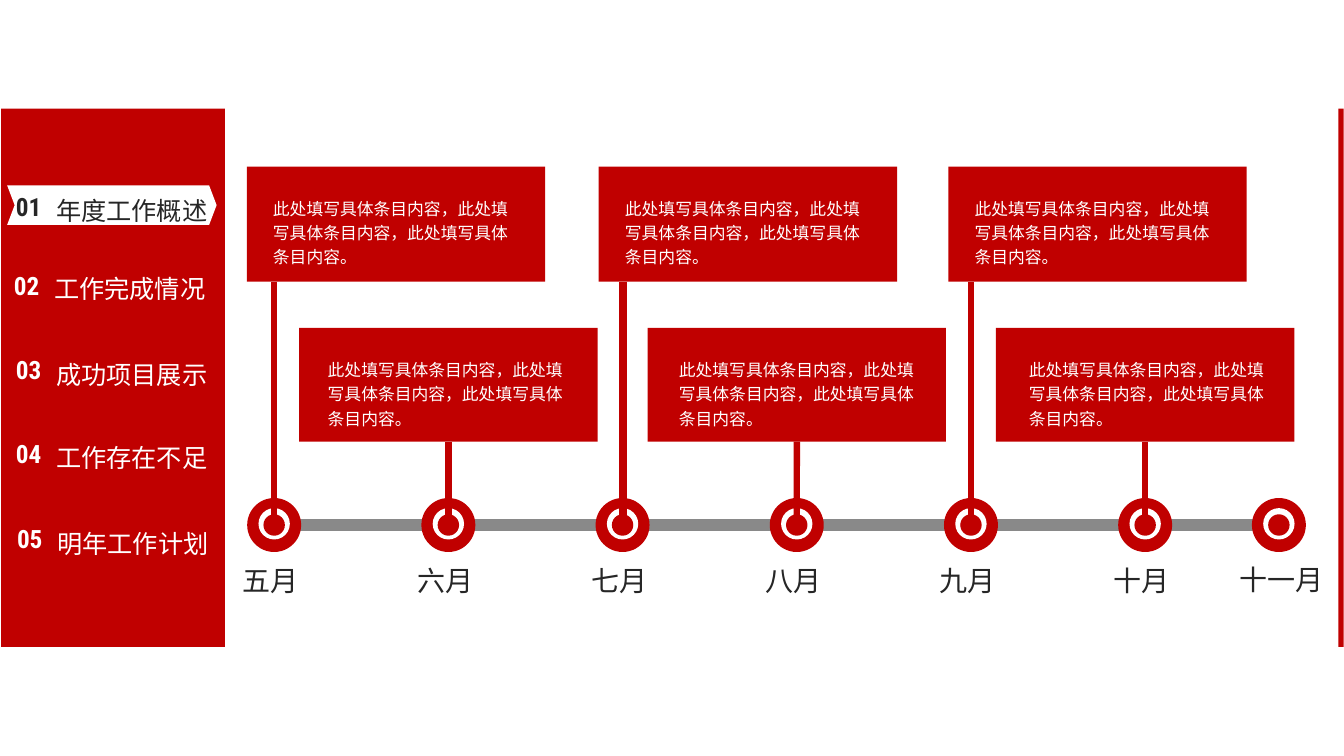
from dataclasses import dataclass

import lxml.etree
import pptx
import pptx.dml.color
import pptx.enum.shapes
import pptx.enum.text
import pptx.oxml.ns
import pptx.presentation
import pptx.shapes.autoshape
import pptx.slide
import pptx.text.text
import pptx.util

Cm = pptx.util.Cm
Kind = pptx.enum.shapes.MSO_SHAPE
Align = pptx.enum.text.PP_ALIGN

RED = pptx.dml.color.RGBColor(0xC0, 0x00, 0x00)
WHITE = pptx.dml.color.RGBColor(0xFF, 0xFF, 0xFF)
DARK = pptx.dml.color.RGBColor(0x26, 0x26, 0x26)
GREY = pptx.dml.color.RGBColor(0x89, 0x89, 0x89)

FIRST, PITCH, LAST = 6.91, 4.39, 32.23
AXIS = 13.23
CARD_WIDTH = 7.52
TEXT_WIDTH = 6.07
NOTE = "此处填写具体条目内容，此处填写具体条目内容，此处填写具体条目内容。"


@dataclass
class Topic:
    label: str
    left: float
    top: float
    label_top: float


@dataclass
class Month:
    name: str
    mid: float
    left: float
    top: float
    width: float


@dataclass
class Card:
    left: float
    top: float
    height: float
    inset: float
    stem: float
    weight: float = 4.6
    joined: bool = False


TOPICS = [
    Topic("年度工作概述", 0.15, 4.7, 4.42),
    Topic("工作完成情况", 0.1, 6.68, 6.38),
    Topic("成功项目展示", 0.15, 8.81, 8.56),
    Topic("工作存在不足", 0.15, 10.92, 10.64),
    Topic("明年工作计划", 0.18, 13.06, 12.8),
]

MIDS = [FIRST + PITCH * i for i in range(6)]
MONTHS = [
    Month(name, mid, mid - 1.04, 14.07, 1.93)
    for name, mid in zip(["五月", "六月", "七月", "八月", "九月", "十月"], MIDS)
] + [Month("十一月", LAST, LAST - 1.24, 14.05, 2.64)]

CARDS = [
    Card(6.22, 4.2, 2.9, 0.66, MIDS[0]),
    Card(15.09, 4.2, 2.9, 0.66, MIDS[2], weight=5.8),
    Card(23.9, 4.2, 2.9, 0.66, MIDS[4]),
] + [
    Card(mid - CARD_WIDTH / 2, 8.26, 2.87, inset, mid, joined=True)
    for mid, inset in zip(MIDS[1::2], [0.72, 0.79, 0.83])
]


def write(
    frame: pptx.text.text.TextFrame,
    text: str,
    *,
    size: float,
    font: str,
    color: pptx.dml.color.RGBColor,
    bold: bool = False,
    align: Align = Align.LEFT,
    space: float = 1.0,
    wrap: bool = True,
) -> None:
    frame.word_wrap = wrap
    frame.vertical_anchor = pptx.enum.text.MSO_ANCHOR.TOP
    line = frame.paragraphs[0]
    line.alignment = align
    line.line_spacing = space
    run = line.add_run()
    run.text = text
    run.font.size = pptx.util.Pt(size)
    run.font.name = font
    run.font.bold = bold
    run.font.color.rgb = color


def draw(
    slide: pptx.slide.Slide,
    kind: Kind,
    left: float,
    top: float,
    width: float,
    height: float,
    color: pptx.dml.color.RGBColor,
) -> pptx.shapes.autoshape.Shape:
    shape = slide.shapes.add_shape(kind, Cm(left), Cm(top), Cm(width), Cm(height))
    shape.shadow.inherit = False
    shape.fill.solid()
    shape.fill.fore_color.rgb = color
    shape.line.fill.background()
    return shape


def add_box(
    slide: pptx.slide.Slide, left: float, top: float, width: float, height: float
) -> pptx.text.text.TextFrame:
    box = slide.shapes.add_textbox(Cm(left), Cm(top), Cm(width), Cm(height))
    return box.text_frame


def add_title(
    slide: pptx.slide.Slide, left: float, top: float, width: float, height: float
) -> pptx.text.text.TextFrame:
    title = slide.shapes.title
    title.left, title.top = Cm(left), Cm(top)
    title.width, title.height = Cm(width), Cm(height)
    title.text_frame.auto_size = pptx.enum.text.MSO_AUTO_SIZE.NONE
    slide.shapes._spTree.append(title._element)
    return title.text_frame


def add_menu(slide: pptx.slide.Slide) -> None:
    draw(slide, Kind.RECTANGLE, 0.03, 2.74, 5.64, 13.56, RED)
    mark = draw(slide, Kind.CHEVRON, 0.18, 4.67, 5.28, 1, WHITE)
    mark.adjustments[0] = 0.19
    for rank, topic in enumerate(TOPICS, 1):
        active = rank == 1
        color = DARK if active else WHITE
        write(add_box(slide, topic.left, topic.top, 1.42, 1.02), f"{rank:02}",
              size=18, font="Roboto Condensed", color=color, bold=True)
        place = add_title if active else add_box
        write(place(slide, topic.left + 0.58, topic.label_top, 5.18, 1.27), topic.label,
              size=18, font="Open Sans", color=color, align=Align.CENTER, space=1.5)


def add_month(slide: pptx.slide.Slide, month: Month) -> None:
    for size, middle, color in [(1.36, AXIS, RED), (0.79, 13.2, WHITE), (0.54, AXIS, RED)]:
        draw(slide, Kind.OVAL, month.mid - size / 2, middle - size / 2, size, size, color)
    write(add_box(slide, month.left, month.top, month.width, 1.12), month.name,
          size=20, font="Arial Narrow", color=DARK, wrap=False)


def add_card(slide: pptx.slide.Slide, card: Card) -> None:
    shape = draw(slide, Kind.RECTANGLE, card.left, card.top, CARD_WIDTH, card.height, RED)
    frame = shape.text_frame
    frame.margin_left = Cm(card.inset)
    frame.margin_right = Cm(CARD_WIDTH - TEXT_WIDTH - card.inset)
    frame.margin_top = Cm(0.71)
    write(frame, NOTE, size=12, font="Calibri", color=WHITE, space=1.2)
    stem = slide.shapes.add_connector(
        pptx.enum.shapes.MSO_CONNECTOR.STRAIGHT,
        Cm(card.stem), Cm(card.top + card.height), Cm(card.stem), Cm(AXIS))
    if card.joined:
        stem.begin_connect(shape, 2)
    stem.line.color.rgb = RED
    stem.line.width = pptx.util.Pt(card.weight)
    lxml.etree.SubElement(stem._element.spPr, pptx.oxml.ns.qn("a:effectLst"))


def main() -> None:
    deck = pptx.Presentation()
    deck.slide_width, deck.slide_height = Cm(33.87), Cm(19.05)
    slide = deck.slides.add_slide(deck.slide_layouts[5])
    add_menu(slide)
    draw(slide, Kind.RECTANGLE, FIRST, 13.08, LAST - FIRST, 0.3, GREY)
    for month in MONTHS:
        add_month(slide, month)
    for card in CARDS:
        add_card(slide, card)
    draw(slide, Kind.RECTANGLE, 33.73, 2.74, 0.13, 13.56, RED)
    deck.save("out.pptx")


if __name__ == "__main__":
    main()
